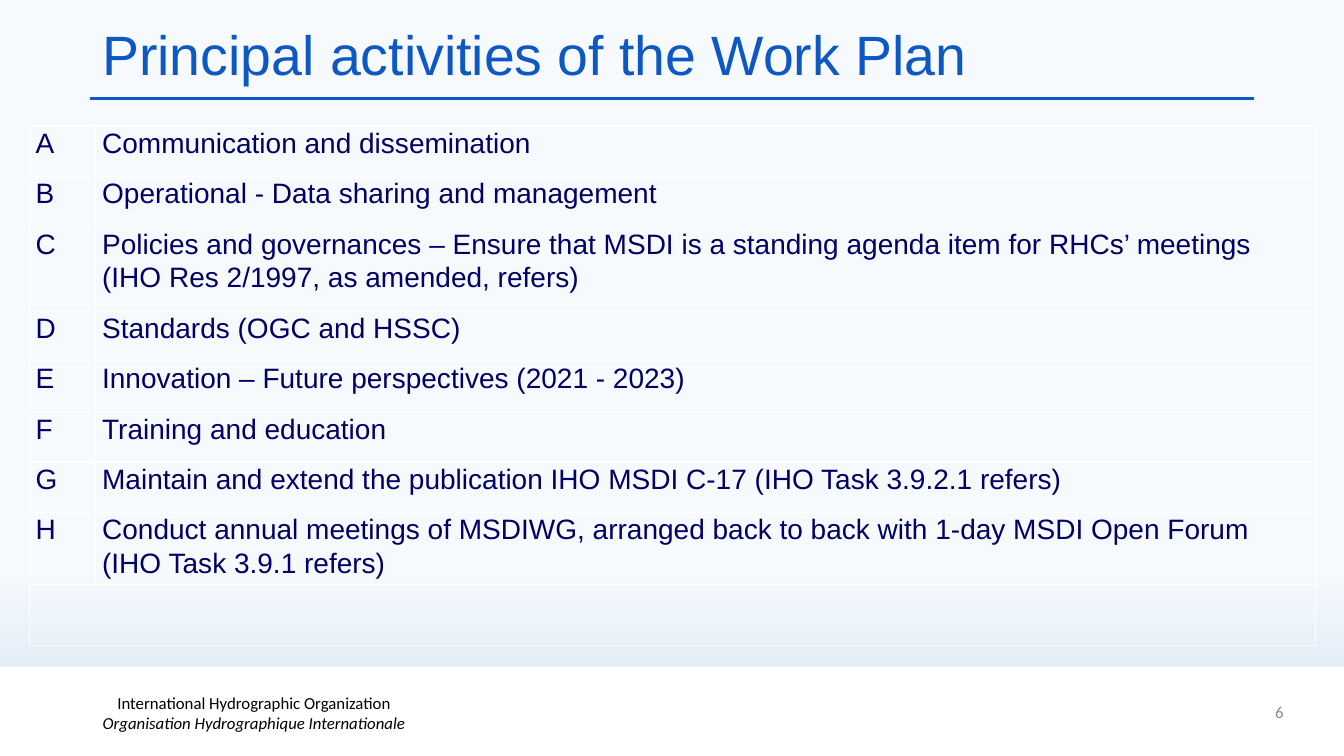
from lxml import etree
from pptx import Presentation
from pptx.dml.color import RGBColor
from pptx.enum.shapes import MSO_CONNECTOR, MSO_SHAPE
from pptx.enum.text import MSO_ANCHOR, PP_ALIGN
from pptx.oxml.ns import qn
from pptx.util import Pt

STRAIGHT, RECT = MSO_CONNECTOR.STRAIGHT, MSO_SHAPE.RECTANGLE
MIDDLE = MSO_ANCHOR.MIDDLE
LEFT, CENTER, RIGHT = PP_ALIGN.LEFT, PP_ALIGN.CENTER, PP_ALIGN.RIGHT
BLUE, NAVY, WHITE, BLACK, GREY = "0E58C4", "000066", "FFFFFF", "000000", "8C8C8C"

TITLE = dict(name="Arial", size=Pt(39.6))
BODY = dict(name="Arial", size=Pt(20))
SMALL = dict(name="Calibri", size=Pt(12))

COLUMNS = [47.5, 871.2]
# Letter, activity, row height
ACTIVITIES = [
    ("A", "Communication and dissemination", 36),
    ("B", "Operational - Data sharing and management", 36),
    ("C", "Policies and governances – Ensure that MSDI is a standing agenda item "
          "for RHCs’ meetings (IHO Res 2/1997, as amended, refers)", 60),
    ("D", "Standards (OGC and HSSC)", 36),
    ("E", "Innovation – Future perspectives (2021 - 2023)", 36),
    ("F", "Training and education", 36),
    ("G", "Maintain and extend the publication IHO MSDI C-17 "
          "(IHO Task 3.9.2.1 refers)", 36),
    ("H", "Conduct annual meetings of MSDIWG, arranged back to back with "
          "1-day MSDI Open Forum (IHO Task 3.9.1 refers)", 47.5),
    ("", "", 43.5),
]


def rgb(color):
    return RGBColor.from_string(color)


def add_run(p, text, color, fmt):
    r = p.add_run()
    r.text = text
    r.font.color.rgb = rgb(color)
    for key, value in fmt.items():
        setattr(r.font, key, value)


def add_text(s, box, lines, color, fmt, align=LEFT, spacing=1.0):
    """Lines are (text, extra format) pairs, joined by line breaks."""
    tf = s.shapes.add_textbox(*map(Pt, box)).text_frame
    tf.word_wrap = True
    tf.vertical_anchor = MIDDLE
    p = tf.paragraphs[0]
    p.alignment, p.line_spacing = align, spacing
    for i, (text, extra) in enumerate(lines):
        if i:
            p.add_line_break()
        add_run(p, text, color, {**fmt, **extra})


def set_background(s):
    fill = s.background.fill
    fill.gradient()
    fill.gradient_angle = 270
    for stop, (pos, color) in zip(fill.gradient_stops, [(0.75, "F7FAFD"), (1, "D0E2F1")]):
        stop.position = pos
        stop.color.rgb = rgb(color)


def add_rule(s, x1, x2, y):
    line = s.shapes.add_connector(STRAIGHT, Pt(x1), Pt(y), Pt(x2), Pt(y))
    line.line.color.rgb = rgb(BLUE)
    line.line.width = Pt(2.25)
    etree.SubElement(line._element.spPr, qn("a:effectLst"))


def add_band(s, box):
    band = s.shapes.add_shape(RECT, *map(Pt, box))
    band.shadow.inherit = False
    band.fill.solid()
    band.fill.fore_color.rgb = rgb(WHITE)
    band.line.fill.background()


def format_cell(cell):
    cell.margin_left = cell.margin_right = Pt(4.5)
    cell.margin_top = cell.margin_bottom = 0
    # Borders come before the fill in the cell properties
    props = cell._tc.get_or_add_tcPr()
    for side in ("lnL", "lnR", "lnT", "lnB"):
        ln = etree.SubElement(props, qn("a:" + side), w=str(Pt(1)))
        solid = etree.SubElement(ln, qn("a:solidFill"))
        etree.SubElement(solid, qn("a:srgbClr"), val=WHITE)
    cell.fill.background()


def add_activities(s, left, top):
    height = sum(row[2] for row in ACTIVITIES)
    table = s.shapes.add_table(len(ACTIVITIES), len(COLUMNS), Pt(left), Pt(top),
                               Pt(sum(COLUMNS)), Pt(height)).table
    table.first_row = table.horz_banding = False
    for column, width in zip(table.columns, COLUMNS):
        column.width = Pt(width)
    for row, (*texts, row_height) in zip(table.rows, ACTIVITIES):
        row.height = Pt(row_height)
        for cell, text in zip(row.cells, texts):
            format_cell(cell)
            if text:
                p = cell.text_frame.paragraphs[0]
                p.line_spacing = 1.07
                add_run(p, text, NAVY, BODY)
    last = len(ACTIVITIES) - 1
    table.cell(last, 0).merge(table.cell(last, 1))


def main():
    prs = Presentation()
    prs.slide_width, prs.slide_height = Pt(960), Pt(540)
    s = prs.slides.add_slide(prs.slide_layouts[6])
    set_background(s)

    # Title rule and footer
    add_rule(s, 64, 896, 70.5)
    add_band(s, (0, 476, 960, 64))
    add_text(s, (19.5, 494.5, 324, 29),
             [("International Hydrographic Organization", {}),
              ("Organisation Hydrographique Internationale", {"italic": True})],
             BLACK, SMALL, CENTER)

    # Title, page number and work plan
    add_text(s, (66, 20, 828, 42.5), [("Principal activities of the Work Plan", {})],
             BLUE, TITLE, spacing=0.9)
    add_text(s, (708, 494, 216, 29), [("6", {})], GREY, SMALL, RIGHT)
    add_activities(s, 21, 90)

    prs.save("out.pptx")


if __name__ == "__main__":
    main()
